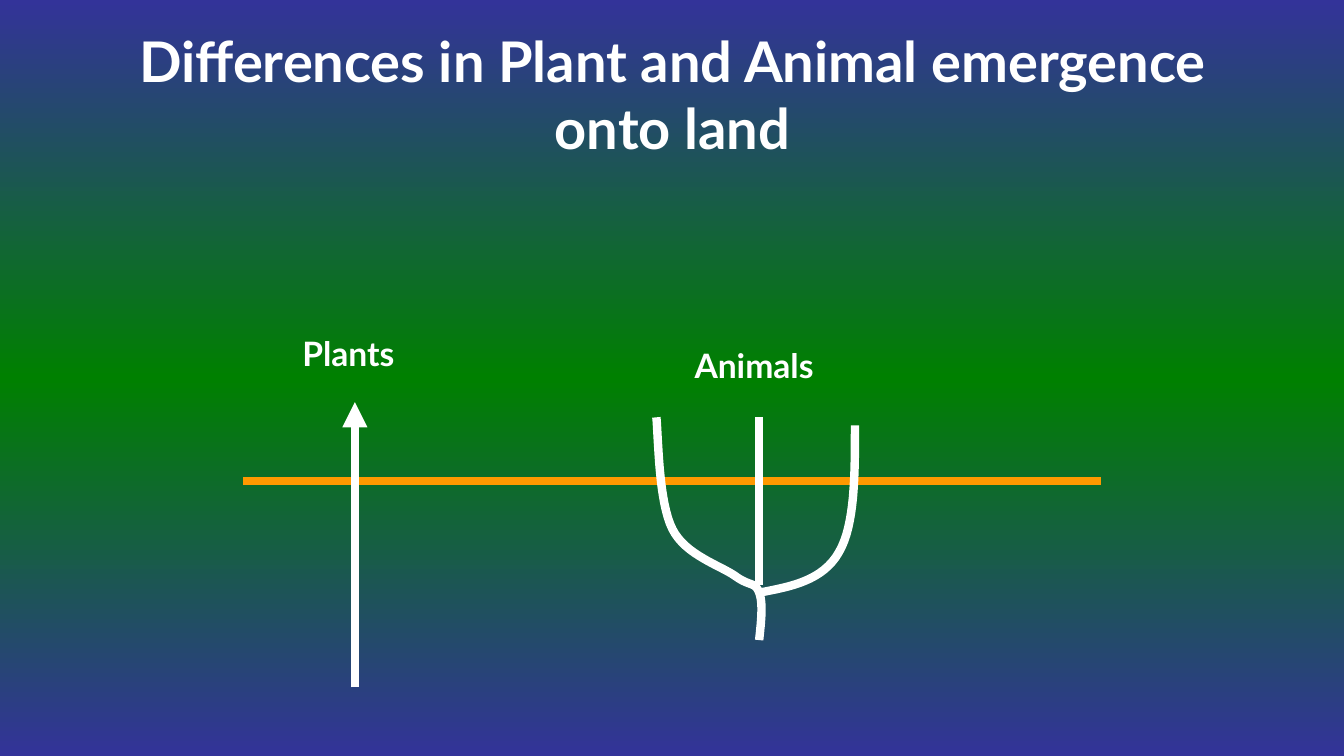
from copy import deepcopy
from dataclasses import dataclass

from pptx import Presentation
from pptx.dml.color import RGBColor
from pptx.enum.dml import MSO_THEME_COLOR
from pptx.enum.shapes import MSO_CONNECTOR
from pptx.enum.text import MSO_ANCHOR, MSO_AUTO_SIZE, PP_ALIGN
from pptx.oxml.ns import qn
from pptx.util import Inches, Pt
from lxml.etree import SubElement


@dataclass(frozen=True)
class Theme:
    font: str = "Lato"
    white: RGBColor = RGBColor(0xFF, 0xFF, 0xFF)
    shoreline: RGBColor = RGBColor(0xFF, 0x99, 0x00)
    sea: RGBColor = RGBColor(0x33, 0x33, 0x99)
    land: RGBColor = RGBColor(0x00, 0x80, 0x00)
    title_size: int = 40
    label_size: int = 24
    line_width: int = 6


THEME = Theme()
CURVE_STEPS = 16

# Animal branches: start point, then cubic segments (two controls and an end)
LEFT_BRANCH = ((7.53, 6.35), [
    ((7.55, 6.16), (7.57, 5.98), (7.53, 5.88)),
    ((7.49, 5.77), (7.44, 5.82), (7.3, 5.72)),
    ((7.15, 5.61), (6.8, 5.51), (6.67, 5.25)),
    ((6.53, 4.98), (6.53, 4.33), (6.51, 4.14)),
])
RIGHT_BRANCH = ((7.53, 5.88), [
    ((7.85, 5.82), (8.16, 5.76), (8.32, 5.48)),
    ((8.48, 5.21), (8.48, 4.71), (8.48, 4.22)),
])


def set_background(slide):
    """Vertical gradient: sea, land, sea."""
    fill = slide.background.fill
    fill.gradient()
    fill.gradient_angle = 270
    stop_list = next(slide.element.iter(qn("a:gsLst")))
    stop_list.insert(1, deepcopy(stop_list[0]))
    colors = (THEME.sea, THEME.land, THEME.sea)
    for stop, position, color in zip(fill.gradient_stops, (0, 0.5, 1), colors):
        stop.color.theme_color = MSO_THEME_COLOR.ACCENT_1
        stop.color.rgb = color
        stop.position = position


def write_text(frame, text, *, size, align=PP_ALIGN.LEFT, anchor=MSO_ANCHOR.TOP,
               wrap=True, auto_size=MSO_AUTO_SIZE.NONE):
    frame.word_wrap = wrap
    frame.auto_size = auto_size
    frame.vertical_anchor = anchor
    paragraph = frame.paragraphs[0]
    paragraph.alignment = align
    run = paragraph.add_run()
    run.text = text
    run.font.name = THEME.font
    run.font.size = Pt(size)
    run.font.bold = True
    run.font.color.rgb = THEME.white


def add_title(slide, text):
    title = slide.shapes.title
    title.left, title.top = Inches(0.67), Inches(0.3)
    title.width, title.height = Inches(12), Inches(1.25)
    write_text(title.text_frame, text, size=THEME.title_size,
               align=PP_ALIGN.CENTER, anchor=MSO_ANCHOR.MIDDLE)


def add_label(slide, text, left, top, width):
    box = slide.shapes.add_textbox(Inches(left), Inches(top), Inches(width), Inches(0.5))
    write_text(box.text_frame, text, size=THEME.label_size, wrap=False,
               auto_size=MSO_AUTO_SIZE.SHAPE_TO_FIT_TEXT)


def style_line(line, color):
    line.color.rgb = color
    line.width = Pt(THEME.line_width)


def add_line(slide, start, end, color=THEME.white, arrow=False):
    connector = slide.shapes.add_connector(
        MSO_CONNECTOR.STRAIGHT, *map(Inches, start + end))
    style_line(connector.line, color)
    if arrow:
        SubElement(connector.line._get_or_add_ln(), qn("a:tailEnd"), type="triangle")
    SubElement(connector._element.spPr, qn("a:effectLst"))


def curve_points(start, segments):
    """Points along a chain of cubic curves, after its start."""
    points = []
    for first, second, end in segments:
        for step in range(1, CURVE_STEPS + 1):
            t = step / CURVE_STEPS
            weights = ((1 - t) ** 3, 3 * t * (1 - t) ** 2, 3 * t ** 2 * (1 - t), t ** 3)
            corners = (start, first, second, end)
            points.append(tuple(
                Inches(sum(w * corner[axis] for w, corner in zip(weights, corners)))
                for axis in (0, 1)))
        start = end
    return points


def add_branch(slide, start, segments):
    builder = slide.shapes.build_freeform(Inches(start[0]), Inches(start[1]))
    builder.add_line_segments(curve_points(start, segments), close=False)
    shape = builder.convert_to_shape()
    shape.shadow.inherit = False
    shape.fill.background()
    style_line(shape.line, THEME.white)


def main():
    presentation = Presentation()
    presentation.slide_width, presentation.slide_height = Inches(13.33), Inches(7.5)
    slide = presentation.slides.add_slide(presentation.slide_layouts[5])
    set_background(slide)
    add_title(slide, "Differences in Plant and Animal emergence onto land")

    # Shoreline, then the single plant lineage crossing it
    add_line(slide, (10.92, 4.77), (2.41, 4.77), THEME.shoreline)
    add_line(slide, (3.52, 6.82), (3.52, 3.99), arrow=True)

    # Animal lineages crossing separately
    add_branch(slide, *LEFT_BRANCH)
    add_line(slide, (7.53, 5.8), (7.53, 4.14))
    add_branch(slide, *RIGHT_BRANCH)

    # Labels
    add_label(slide, "Plants", 2.9, 3.25, 1.24)
    add_label(slide, "Animals", 6.79, 3.37, 1.53)
    presentation.save("out.pptx")


if __name__ == "__main__":
    main()
